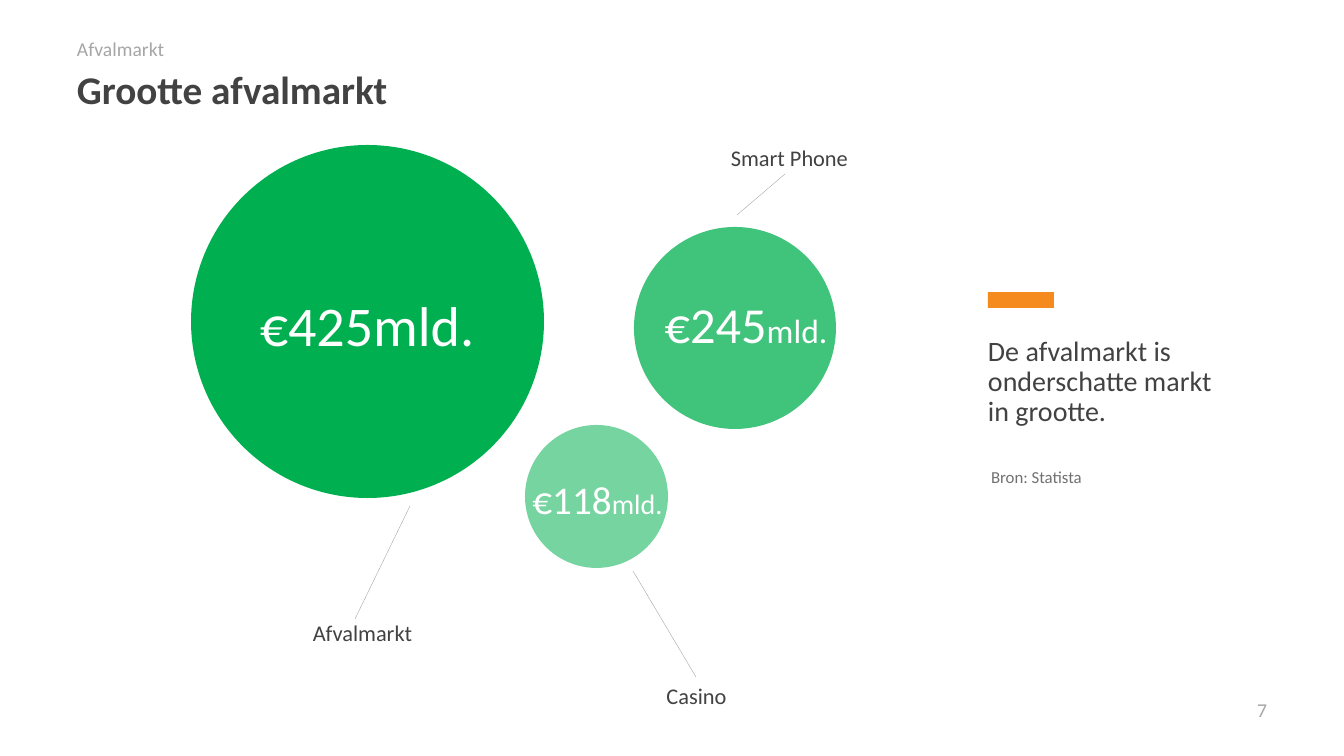
"""Build the slide comparing the size of the waste market with two other markets."""
from lxml import etree
from pptx import Presentation, util as u
from pptx.dml.color import RGBColor
from pptx.enum import shapes, text
from pptx.oxml.ns import qn

PX = 12192000 / 1344
DARK = RGBColor(0x42, 0x42, 0x42)
GREY = RGBColor(0xA6, 0xA6, 0xA6)
SOURCE_GREY = RGBColor(0x71, 0x71, 0x71)
LINE_GREY = RGBColor(0xA0, 0xA0, 0xA0)
GREEN = RGBColor(0x00, 0xB0, 0x50)
ORANGE = RGBColor(0xF5, 0x8B, 0x1E)
WHITE = RGBColor(0xFF, 0xFF, 0xFF)
LEFT, CENTER, RIGHT = text.PP_ALIGN.LEFT, text.PP_ALIGN.CENTER, text.PP_ALIGN.RIGHT
TOP, MIDDLE = text.MSO_ANCHOR.TOP, text.MSO_ANCHOR.MIDDLE

presentation = Presentation()
presentation.slide_width = u.Emu(12192000)
presentation.slide_height = u.Emu(6858000)
slide = presentation.slides.add_slide(presentation.slide_layouts[6])


def add_text(box, parts, color, align=CENTER, anchor=TOP, inset=(10, 5), spacing=1.0, bold=False):
    shape = slide.shapes.add_textbox(*(u.Emu(round(value * PX)) for value in box))
    frame = shape.text_frame
    frame.word_wrap = True
    frame.vertical_anchor = anchor
    frame.margin_left = frame.margin_right = u.Emu(round(inset[0] * PX))
    frame.margin_top = frame.margin_bottom = u.Emu(round(inset[1] * PX))
    paragraph = frame.paragraphs[0]
    paragraph.alignment = align
    paragraph.line_spacing = spacing
    for words, size in parts:
        run = paragraph.add_run()
        run.text = words
        run.font.name = "Calibri"
        run.font.size = u.Pt(size)
        run.font.bold = bold
        run.font.color.rgb = color


def add_filled(kind, box, color):
    shape = slide.shapes.add_shape(kind, *(u.Emu(round(value * PX)) for value in box))
    shape.shadow.inherit = False
    shape.fill.solid()
    shape.fill.fore_color.rgb = color
    shape.line.fill.background()
    return shape


flush_texts = [
    ((77, 79, 1190, 26), "Grootte afvalmarkt", 28, DARK, LEFT, MIDDLE, 0.9, True),
    ((1187, 703, 80, 13), "7", 14, GREY, RIGHT, MIDDLE, 1.0, False),
    ((77, 40, 1190, 24), "Afvalmarkt", 14, GREY, LEFT, TOP, 0.9, False),
    ((988, 337, 238, 392), "De afvalmarkt is onderschatte markt in grootte.", 20, DARK, LEFT, TOP, 0.9, False),
]
for box, words, size, color, align, anchor, spacing, bold in flush_texts:
    add_text(box, [(words, size)], color, align, anchor, (0, 0), spacing, bold)

add_filled(shapes.MSO_SHAPE.RECTANGLE, (988, 292, 66, 16), ORANGE)

markets = [
    ("Afvalmarkt", (192, 614, 341, 37), (191, 145, 353), 100,
     [("€425mld.", 40)], (183, 285, 368, 78), TOP, (355, 619, 410, 506)),
    ("Casino", (522, 677, 349, 37), (525, 425, 143), 54,
     [("€118", 28), ("mld.", 20)], (324, 470, 547, 58), MIDDLE, (696, 677, 633, 571)),
    ("Smart Phone", (681, 139, 217, 37), (634, 227, 202), 75,
     [("€245", 36), ("mld.", 24)], (410, 288, 672, 112), TOP, (737, 215, 785, 174)),
]
for name, name_box, (left, top, diameter), opacity, amount, amount_box, anchor, ends in markets:
    circle = add_filled(shapes.MSO_SHAPE.OVAL, (left, top, diameter, diameter), GREEN)
    if opacity < 100:
        fill_color = circle.fill._xPr.find(qn("a:solidFill"))[0]
        etree.SubElement(fill_color, qn("a:alpha")).set("val", str(opacity * 1000))
    add_text(amount_box, amount, WHITE, anchor=anchor)
    add_text(name_box, [(name, 16)], DARK)
    leader = slide.shapes.add_connector(
        shapes.MSO_CONNECTOR.STRAIGHT, *(u.Emu(round(value * PX)) for value in ends))
    leader.line.color.rgb = LINE_GREY
    leader.line.width = u.Pt(0.25)
    etree.SubElement(leader._element.spPr, qn("a:effectLst"))

add_text((981, 462, 323, 30), [("Bron: Statista", 12)], SOURCE_GREY, align=LEFT)

presentation.save("out.pptx")
